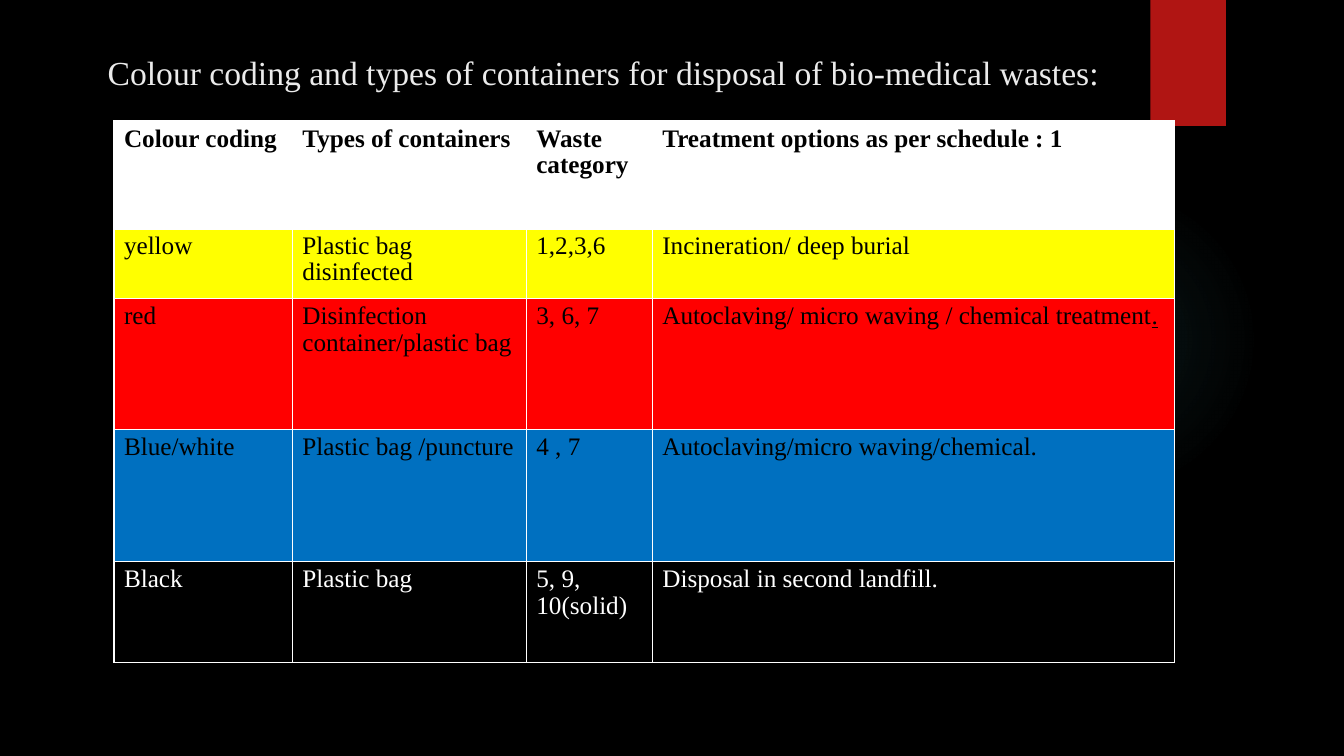
from lxml import etree
from pptx import Presentation
from pptx.dml.color import RGBColor
from pptx.enum.shapes import MSO_SHAPE as Shape
from pptx.enum.text import MSO_ANCHOR as Anchor
from pptx.oxml import parse_xml
from pptx.oxml.ns import qn
from pptx.util import Inches, Pt

FONT = "Times New Roman"
NAMESPACE = "http://schemas.openxmlformats.org/drawingml/2006/main"
COLUMN_WIDTHS = [1.77, 2.32, 1.25, 5.18]
# Row height, fill, text colour, cell texts
WASTE_ROWS = [
    (1.06, "FFFFFF", "000000", ["Colour coding", "Types of containers", "Waste category",
                                "Treatment options as per schedule : 1"]),
    (0.7, "FFFF00", "000000", ["yellow", "Plastic bag disinfected", "1,2,3,6",
                               "Incineration/ deep burial"]),
    (1.3, "FF0000", "000000", ["red", "Disinfection container/plastic bag", "3, 6, 7",
                               "Autoclaving/ micro waving / chemical treatment"]),
    (1.31, "0070C0", "000000", ["Blue/white", "Plastic bag /puncture", "4 , 7",
                                "Autoclaving/micro waving/chemical."]),
    (1, "000000", "FFFFFF", ["Black", "Plastic bag", "5, 9, 10(solid)",
                             "Disposal in second landfill."]),
]


def paint(fill, color):
    fill.solid()
    fill.fore_color.rgb = RGBColor.from_string(color)


def write(para, text, size=18, color="000000", bold=False, underline=False):
    span = para.add_run()
    span.text = text
    font = span.font
    font.name, font.size = FONT, Pt(size)
    font.bold, font.underline = bold, underline
    font.color.rgb = RGBColor.from_string(color)


def add_plain_shape(page, kind, left, top, width, height, color):
    shape = page.shapes.add_shape(kind, Inches(left), Inches(top), Inches(width), Inches(height))
    shape.shadow.inherit = False
    shape.line.fill.background()
    paint(shape.fill, color)
    return shape


def add_glow(page):
    glow = add_plain_shape(page, Shape.OVAL, 9.41, 1.83, 3.08, 3.08, "50B9C1")
    stops = "".join(
        f'<a:gs pos="{position * 1000}"><a:srgbClr val="50B9C1">'
        f'<a:alpha val="{opacity * 1000}"/></a:srgbClr></a:gs>'
        for position, opacity in [(0, 7), (36, 6), (69, 0), (100, 0)])
    gradient = parse_xml(
        f'<a:gradFill xmlns:a="{NAMESPACE}"><a:gsLst>{stops}</a:gsLst><a:path path="circle">'
        '<a:fillToRect l="50000" t="50000" r="50000" b="50000"/></a:path></a:gradFill>')
    properties = glow.element.spPr
    properties.replace(properties.find(qn("a:solidFill")), gradient)


def add_ribbon(page):
    ribbon = add_plain_shape(page, Shape.RECTANGLE, 11.41, 0, 0.75, 1.25, "B01513")
    effects = ribbon.element.spPr.find(qn("a:effectLst"))
    effects.append(parse_xml(
        f'<a:outerShdw xmlns:a="{NAMESPACE}" blurRad="{Pt(3)}" dist="{Pt(2)}" dir="5400000" '
        'rotWithShape="0"><a:srgbClr val="000000"><a:alpha val="45000"/></a:srgbClr>'
        '</a:outerShdw>'))


def add_title(page, text):
    box = page.shapes.add_textbox(Inches(0.97), Inches(0.43), Inches(10.29), Inches(1.53))
    frame = box.text_frame
    frame.word_wrap = True
    frame.vertical_anchor = Anchor.TOP
    frame.margin_top = Inches(0.09)
    write(frame.paragraphs[0], text, size=24, color="EBEBEB")


def add_borders(cell, bottom_width):
    """Draw white borders, placed ahead of the cell fill as the schema requires."""
    properties = cell._tc.get_or_add_tcPr()
    sides = [("lnL", 1), ("lnR", 1), ("lnT", 1), ("lnB", bottom_width)]
    for index, (side, width) in enumerate(sides):
        line = etree.Element(qn(f"a:{side}"), w=str(Pt(width)))
        fill = etree.SubElement(line, qn("a:solidFill"))
        etree.SubElement(fill, qn("a:srgbClr"), val="FFFFFF")
        properties.insert(index, line)


def add_waste_table(page):
    table = page.shapes.add_table(
        len(WASTE_ROWS), len(COLUMN_WIDTHS), Inches(1.13), Inches(1.2),
        Inches(sum(COLUMN_WIDTHS)), Inches(sum(row[0] for row in WASTE_ROWS))).table
    table.horz_banding = False
    for column, width in zip(table.columns, COLUMN_WIDTHS):
        column.width = Inches(width)
    for row_index, (height, fill, color, texts) in enumerate(WASTE_ROWS):
        is_header = row_index == 0
        table.rows[row_index].height = Inches(height)
        for column_index, text in enumerate(texts):
            cell = table.cell(row_index, column_index)
            paint(cell.fill, fill)
            add_borders(cell, bottom_width=3 if is_header else 1)
            para = cell.text_frame.paragraphs[0]
            para.line_spacing = 0.95
            write(para, text, color=color, bold=is_header)
    # The red row's treatment ends with an underlined full stop
    write(table.cell(2, 3).text_frame.paragraphs[0], ".", underline=True)


def main():
    deck = Presentation()
    deck.slide_width, deck.slide_height = Inches(13.33), Inches(7.5)
    page = deck.slides.add_slide(deck.slide_layouts[6])
    paint(page.background.fill, "000000")

    # Backdrop
    add_glow(page)
    add_ribbon(page)

    # Content
    add_title(page, "Colour coding and types of containers for disposal of bio-medical wastes:")
    add_waste_table(page)
    deck.save("out.pptx")


if __name__ == "__main__":
    main()
